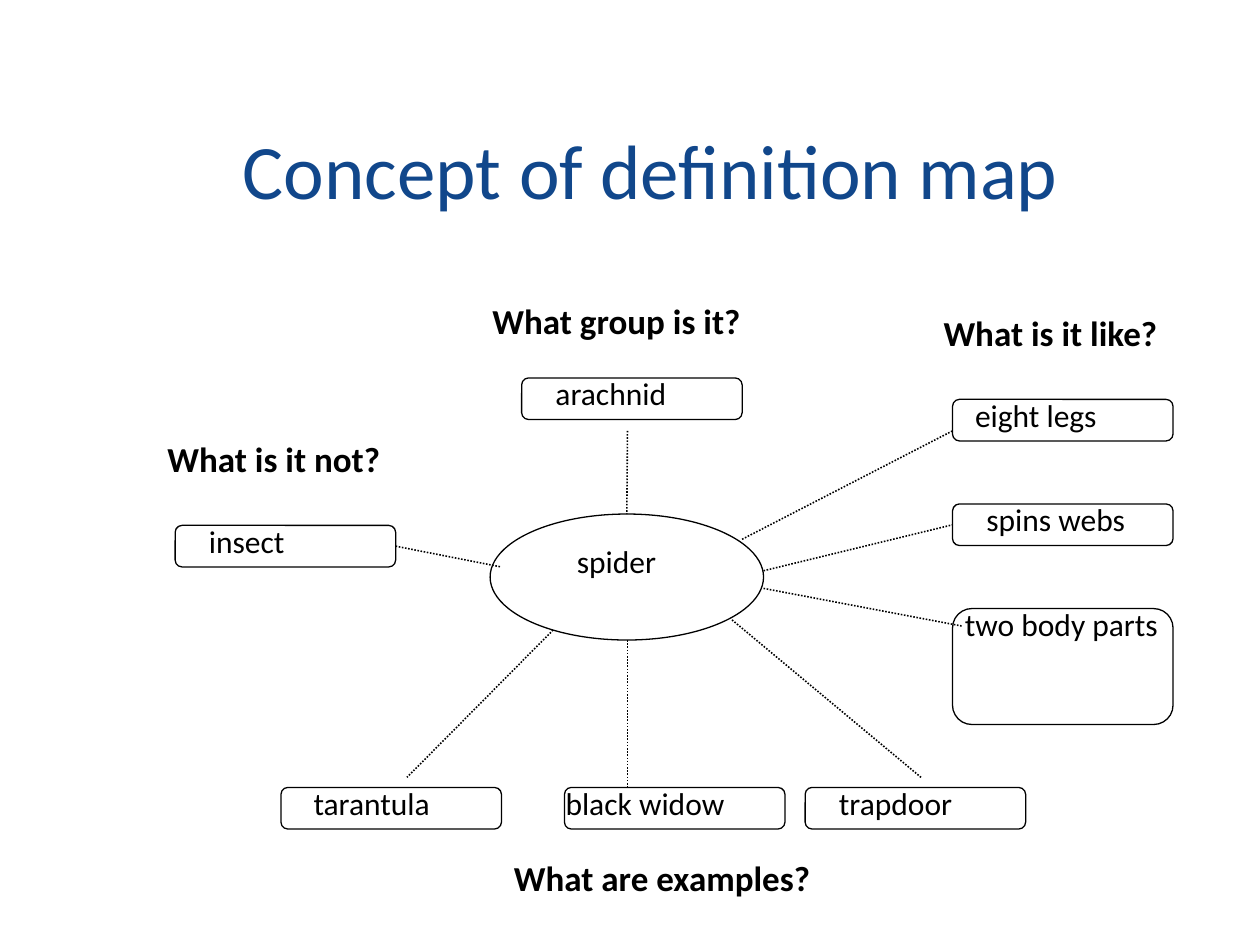
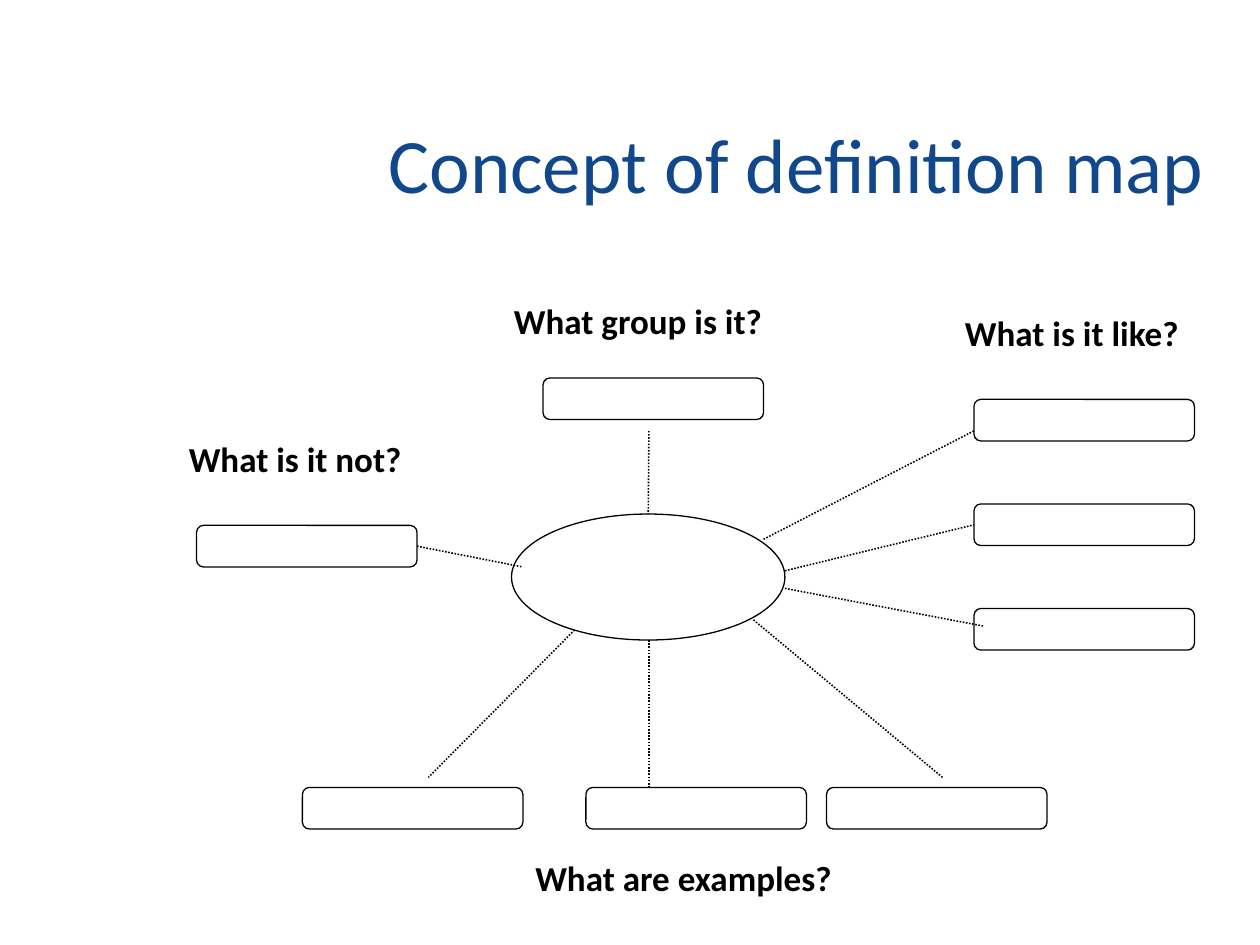
import pptx
import pptx.util
import pptx.dml.color
import pptx.enum.dml
import pptx.enum.shapes
import pptx.enum.text
import pptx.oxml.ns
from lxml import etree

Inches, Pt = pptx.util.Inches, pptx.util.Pt
SHAPE = pptx.enum.shapes.MSO_SHAPE
COLORS = {"title": "11478B", "ink": "000000"}
TITLE = "Concept of definition map"
TITLE_FONT = {"name": "Calibri", "size": Pt(44)}
HEADING_FONT = {"name": "Calibri", "size": Pt(20), "bold": True}
ANSWER_FONT = {"name": "Calibri", "size": Pt(18), "bold": False}
BOX_W, BOX_H, ANSWER_RISE = 1.75, 0.33, 0.08

SLIDES = [
    {"title_at": (0.83, 0.75, 8.67, 1.17), "shift": 0, "filled": True, "tall": 0.92},
    {"title_at": (2.06, 0.67, 8.52, 1.25), "shift": 0.17, "filled": False, "tall": BOX_H},
]
# name: box left, box top, answer indent, answer width, answer height
BOXES = {
    "eight legs": (7.56, 3.17, 0.08, 1.83, 0.5),
    "spins webs": (7.56, 4, 0.17, 1.75, 0.5),
    "two body parts": (7.56, 4.83, 0, 1.83, 0.91),
    "trapdoor": (6.39, 6.25, 0.17, 1.39, 0.5),
    "black widow": (4.48, 6.25, -0.09, 2.17, 0.5),
    "tarantula": (2.23, 6.25, 0.16, 1.5, 0.9),
    "insect": (1.39, 4.17, 0.17, 1.39, 0.5),
    "arachnid": (4.14, 3, 0.17, 1.39, 0.5),
}
CENTRE = (3.89, 4.08, 2.17, 1)
CENTRE_ANSWER = ("spider", (4.48, 4.25, 1.08, 0.5))
HEADINGS = [
    ("What is it like?", (7.39, 2.42, 2, 0.43)),
    ("What are examples?", (3.98, 6.75, 2.83, 0.43)),
    ("What is it not?", (1.23, 3.42, 2, 0.43)),
    ("What group is it?", (3.81, 2.33, 2.33, 0.43)),
]
# from, to, joined start (shape, site), joined end (shape, site)
SPOKES = [
    ((4.98, 3.42), (4.98, 4.08), None, ("centre", 0)),
    ((4.39, 5), (3.23, 6.17), None, None),
    ((4.98, 5.08), (4.98, 6.25), None, None),
    ((5.81, 4.92), (7.31, 6.17), None, None),
    ((5.89, 4.28), (7.56, 3.42), None, None),
    ((6.06, 4.53), (7.56, 4.17), None, ("spins webs", 1)),
    ((6.06, 4.67), (7.64, 4.97), None, None),
    ((3.14, 4.33), (3.98, 4.5), ("insect", 3), None),
]


def rgb(name):
    return pptx.dml.color.RGBColor.from_string(COLORS[name])


def place(at, shift):
    return [Inches(v) for v in (at[0] + shift, *at[1:])]


def write(tf, text, font, color):
    tf.word_wrap = True
    p = tf.paragraphs[0]
    r = p.add_run()
    r.text = text
    for key, value in font.items():
        setattr(r.font, key, value)
    r.font.color.rgb = rgb(color)
    return p


def add_title(s, at):
    sp = s.shapes.title
    for key, value in zip(("left", "top", "width", "height"), place(at, 0)):
        setattr(sp, key, value)
    sp.text_frame.vertical_anchor = pptx.enum.text.MSO_ANCHOR.MIDDLE
    p = write(sp.text_frame, TITLE, TITLE_FONT, "title")
    p.alignment = pptx.enum.text.PP_ALIGN.CENTER


def add_outline(s, kind, at, shift):
    sp = s.shapes.add_shape(kind, *place(at, shift))
    sp.shadow.inherit = False
    sp.fill.background()
    sp.line.color.rgb = rgb("ink")
    sp.line.width = Pt(0.75)
    return sp


def add_text(s, text, at, shift, font):
    tb = s.shapes.add_textbox(*place(at, shift))
    write(tb.text_frame, text, font, "ink")


def add_spoke(s, start, end, joined_start, joined_end, shapes, shift):
    ends = place(start, shift) + place(end, shift)
    c = s.shapes.add_connector(pptx.enum.shapes.MSO_CONNECTOR.STRAIGHT, *ends)
    for join, target in ((c.begin_connect, joined_start), (c.end_connect, joined_end)):
        if target:
            join(shapes[target[0]], target[1])
    c.line.color.rgb = rgb("ink")
    c.line.width = Pt(0.92)
    c.line.dash_style = pptx.enum.dml.MSO_LINE.ROUND_DOT
    etree.SubElement(c._element.spPr, pptx.oxml.ns.qn("a:effectLst"))


def build_map(s, title_at, shift, filled, tall):
    add_title(s, title_at)
    shapes = {}
    for name, (left, top, *_) in BOXES.items():
        height = tall if name == "two body parts" else BOX_H
        shapes[name] = add_outline(s, SHAPE.ROUNDED_RECTANGLE, (left, top, BOX_W, height), shift)
    shapes["centre"] = add_outline(s, SHAPE.OVAL, CENTRE, shift)
    for spoke in SPOKES:
        add_spoke(s, *spoke, shapes, shift)
    for text, at in HEADINGS:
        add_text(s, text, at, shift, HEADING_FONT)
    if filled:
        for name, (left, top, indent, width, height) in BOXES.items():
            at = (left + indent, top - ANSWER_RISE, width, height)
            add_text(s, name, at, shift, ANSWER_FONT)
        add_text(s, *CENTRE_ANSWER, shift, ANSWER_FONT)


def main():
    prs = pptx.Presentation()
    prs.slide_width, prs.slide_height = Inches(10), Inches(7.5)
    for slide in SLIDES:
        build_map(prs.slides.add_slide(prs.slide_layouts[5]), **slide)
    prs.save("out.pptx")


if __name__ == "__main__":
    main()
